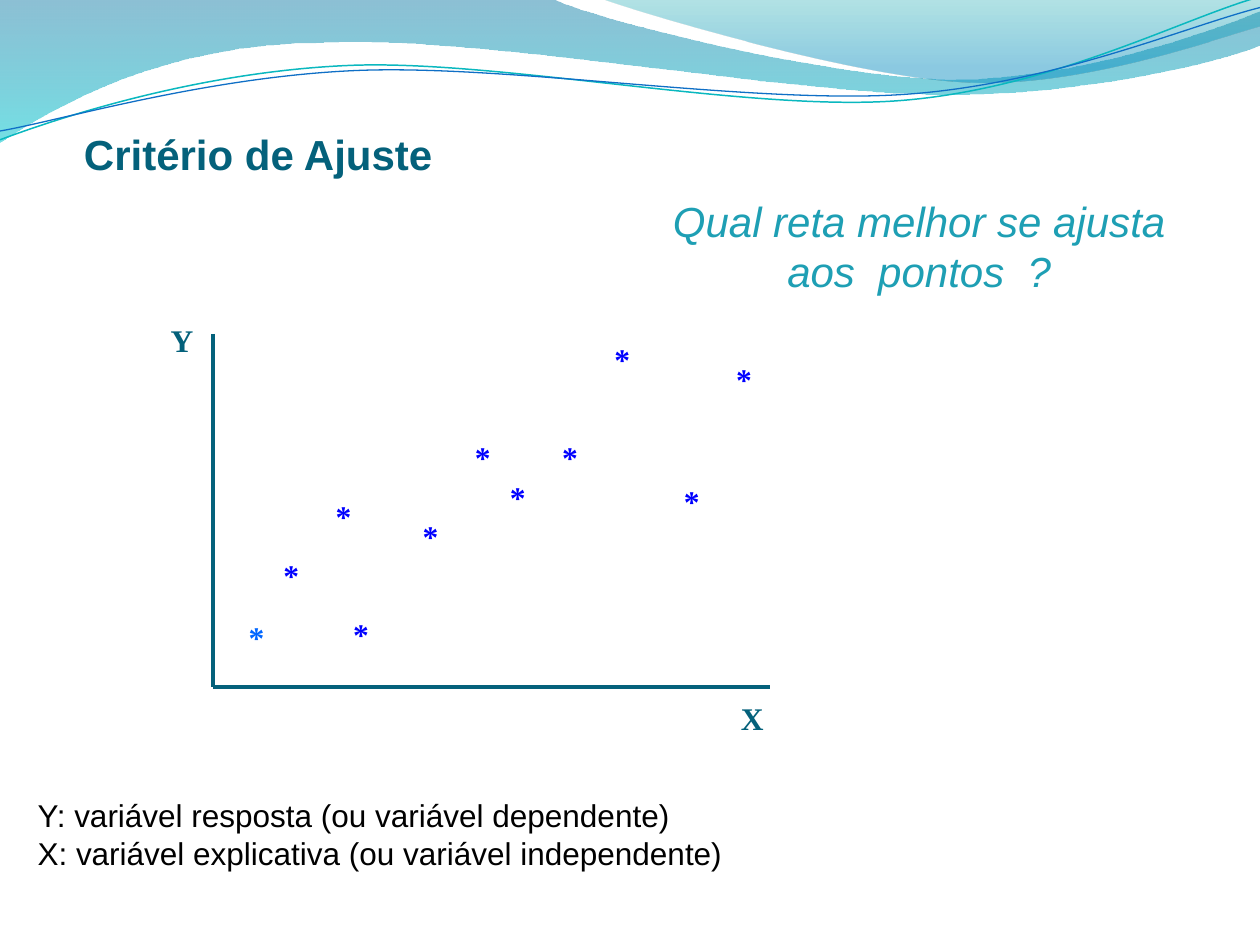
from dataclasses import dataclass

from lxml import etree
from pptx import Presentation
from pptx import util as u
from pptx.dml.color import RGBColor
from pptx.enum import shapes, text
from pptx.oxml.ns import qn


@dataclass(frozen=True)
class Theme:
    head: str = "04617B"
    ask: str = "1E9FB4"
    body: str = "000000"
    dot: str = "0000FF"
    first: str = "0066FF"
    teal: str = "0AB8BF"
    blue: str = "0F6FC6"
    sans: str = "Arial"
    serif: str = "Times New Roman"
    big: int = 24
    small: int = 18


T = Theme()
WIDE, HIGH = 10, 7.5
UNIT = 100  # outline units to the inch
LEFT, TOP, RIGHT, BASE = 1.69, 2.65, 6.11, 5.45  # plot area
COL, ROW = 3.87 / 28, 0.78 / 5  # steps of the grid the points lie on

# Each point is a column and a row from the top left of the plot
POINTS = [(2, 11), (5, 8), (10, 9), (6, 14), (13, 5), (21, 0),
          (28, 1), (25, 7.2), (18, 5), (15, 7)]

# A pair is a straight step; six numbers are a cubic curve
BANDS = [
    ([(0, 0), (4.4, 0), (4.76, 0.17, 6.64, 0.63, 7.58, 0.63),
      (8.53, 0.63, 9.58, 0.26, 10, 0.09), (10, 0.36),
      (9.83, 0.44, 8.7, 0.76, 7.46, 0.75),
      (6.22, 0.75, 3.82, 0.28, 2.57, 0.34),
      (1.29, 0.35, 0.46, 0.83, 0, 1.13)],
     [(0, "0074A1", 45), (1, "00C6CF", 55)]),
    ([(4.79, 0), (5.09, 0.11, 6.82, 0.62, 7.69, 0.65),
      (8.56, 0.69, 9.61, 0.32, 10, 0.21), (10, 0)],
     [(0, "00A1A9", 30), (0.8, "008BBF", 45)]),
]
WAVES = [
    ([(0, 1.11), (0.48, 0.93, 1.58, 0.57, 2.77, 0.52),
      (3.95, 0.47, 5.93, 0.89, 7.13, 0.8),
      (8.33, 0.71, 9.38, 0.15, 9.98, -0.02)], T.teal, 0.85),
    ([(0, 1.04), (0.47, 0.96, 1.64, 0.61, 2.83, 0.56),
      (4.03, 0.51, 5.97, 0.83, 7.17, 0.75),
      (8.36, 0.67, 9.41, 0.21, 10, 0.06)], T.blue, 0.75),
]


def outline(slide, path, close):
    """Build straight steps, then bend those that have control points."""
    ends = [(step[-2] * UNIT, step[-1] * UNIT) for step in path]
    pen = slide.shapes.build_freeform(*ends[0], scale=u.Inches(1) / UNIT)
    pen.add_line_segments(ends[1:], close=close)
    shape = pen.convert_to_shape()
    shape.shadow.inherit = False

    x0, y0 = (min(axis) for axis in zip(*ends))
    nodes = list(shape.element.spPr.iter(qn("a:lnTo")))
    for node, step in zip(nodes, path[1:]):
        if len(step) == 2:
            continue
        node.tag = qn("a:cubicBezTo")
        for place, (x, y) in enumerate((step[:2], step[2:4])):
            spot = etree.Element(qn("a:pt"), x=str(round(x * UNIT - x0)),
                                 y=str(round(y * UNIT - y0)))
            node.insert(place, spot)
    return shape


def band(slide, path, stops):
    """Draw a closed shape with a see-through gradient from top to bottom."""
    shape = outline(slide, path, True)
    shape.line.fill.background()
    shape.fill.gradient()
    shape.fill.gradient_angle = 270
    for stop, (place, tint, _) in zip(shape.fill.gradient_stops, stops):
        stop.position = place
        stop.color.rgb = RGBColor.from_string(tint)
    tints = shape.element.spPr.iter(qn("a:srgbClr"))
    for node, (_, _, share) in zip(tints, stops):
        etree.SubElement(node, qn("a:alpha"), val=str(share * 1000))


def ink(line, tint, width):
    line.color.rgb = RGBColor.from_string(tint)
    line.width = u.Pt(width)


def wave(slide, path, tint, width):
    shape = outline(slide, path, False)
    shape.fill.background()
    ink(shape.line, tint, width)


def axis(slide, *ends):
    line = slide.shapes.add_connector(
        shapes.MSO_CONNECTOR.STRAIGHT, *map(u.Inches, ends))
    ink(line.line, T.head, 2.25)
    etree.SubElement(line.element.spPr, qn("a:effectLst"))


def label(slide, words, area, tint, font=T.serif, size=T.small,
          align=text.PP_ALIGN.CENTER, frame=None, **style):
    box = slide.shapes.add_textbox(*map(u.Inches, area)).text_frame
    for key, value in {"word_wrap": True, **(frame or {})}.items():
        setattr(box, key, value)
    box.text = words
    for para in box.paragraphs:
        para.alignment = align
        face = para.runs[0].font
        face.color.rgb = RGBColor.from_string(tint)
        for key, value in {"name": font, "size": u.Pt(size), **style}.items():
            setattr(face, key, value)


def mark(slide, col, row, tint=T.dot):
    area = (LEFT + col * COL, TOP + row * ROW, 5 * COL, 0.4)
    label(slide, "*", area, tint, bold=True)


def main():
    deck = Presentation()
    deck.slide_width, deck.slide_height = u.Inches(WIDE), u.Inches(HIGH)
    slide = deck.slides.add_slide(deck.slide_layouts[6])

    for item in BANDS:
        band(slide, *item)
    for item in WAVES:
        wave(slide, *item)

    flush = {"vertical_anchor": text.MSO_ANCHOR.BOTTOM, "margin_left": 0,
             "margin_right": 0, "margin_bottom": 0}
    label(slide, "Critério de Ajuste", (WIDE / 15, 0.17, 0.85 * WIDE, 1.25),
          T.head, T.sans, T.big, text.PP_ALIGN.LEFT, flush, bold=True)

    axis(slide, LEFT, TOP, LEFT, BASE)
    axis(slide, LEFT, BASE, RIGHT, BASE)
    label(slide, "X", (5.78, 5.5, 0.38, 0.4), T.head,
          frame={"word_wrap": False}, bold=True)
    label(slide, "Y", (0.89, 2.5, 1.11, 0.4), T.head, bold=True)
    mark(slide, 0, 14.15, T.first)
    for point in POINTS:
        mark(slide, *point)

    label(slide, "Qual reta melhor se ajusta aos  pontos  ?",
          (5.17, HIGH / 5, 4.25, 0.91), T.ask, T.sans, T.big, italic=True)
    label(slide, "Y: variável resposta (ou variável dependente)\n"
          "X: variável explicativa (ou variável independente)",
          (WIDE / 50, 6.27, 6.46, 0.71), T.body, T.sans,
          align=text.PP_ALIGN.LEFT)
    deck.save("out.pptx")


if __name__ == "__main__":
    main()
